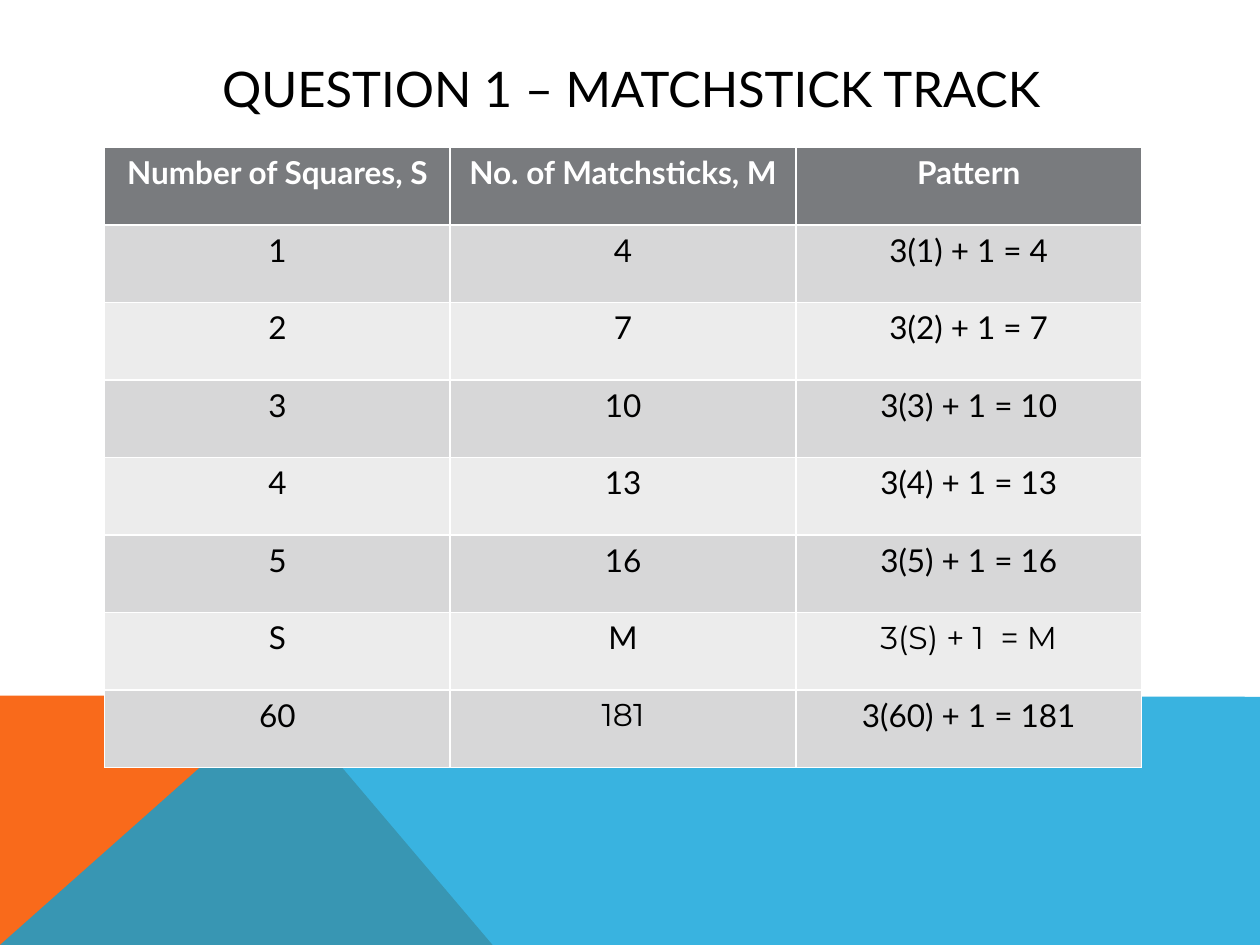
"""Build the matchstick track slide with its number pattern table."""
from lxml.etree import SubElement
from pptx import Presentation
from pptx.dml.color import RGBColor
from pptx.enum.text import MSO_ANCHOR, PP_ALIGN
from pptx.oxml.ns import qn
from pptx.util import Inches, Pt


def color(value):
    return RGBColor.from_string(value)


def style(paragraph, size, font_name, text_color, bold=False):
    paragraph.alignment = PP_ALIGN.CENTER
    paragraph.font.size = Pt(size)
    paragraph.font.name = font_name
    paragraph.font.bold = bold
    paragraph.font.color.rgb = color(text_color)


deck = Presentation()
deck.slide_width, deck.slide_height = Inches(10), Inches(7.5)
slide = deck.slides.add_slide(deck.slide_layouts[6])

bands = [
    ("F96A1B", 100, [(0, 7.5), (0, 5.52), (2.23, 5.52), (3.91, 7.5)]),
    ("08A1D9", 80, [(0, 7.5), (2.23, 5.52), (10, 5.53), (10, 7.5)]),
]
for fill, opacity, corners in bands:
    points = [(Inches(x), Inches(y)) for x, y in corners]
    outline = slide.shapes.build_freeform(*points[0])
    outline.add_line_segments(points[1:], close=True)
    band = outline.convert_to_shape()
    band.shadow.inherit = False
    band.line.fill.background()
    band.fill.solid()
    band.fill.fore_color.rgb = color(fill)
    if opacity < 100:
        fill_color = band.fill._xPr.find(".//" + qn("a:srgbClr"))
        SubElement(fill_color, qn("a:alpha"), val=str(opacity * 1000))

title = slide.shapes.add_textbox(Inches(0.9), Inches(0.4), Inches(8.22), Inches(0.6))
title.text_frame.word_wrap = True
title.text_frame.vertical_anchor = MSO_ANCHOR.MIDDLE
heading = title.text_frame.paragraphs[0]
heading.text = "QUESTION 1 – MATCHSTICK TRACK"
style(heading, 28, "Lato", "000000")

rows = [("Number of Squares, S", "No. of Matchsticks, M", "Pattern")]
for squares in (1, 2, 3, 4, 5):
    matches = 3 * squares + 1
    rows.append((str(squares), str(matches), f"3({squares}) + 1 = {matches}"))
rows += [("S", "M", "3(S) + 1  = M"), ("60", "181", "3(60) + 1 = 181")]
montserrat_texts = ("3(S) + 1  = M", "181")

pattern = slide.shapes.add_table(
    len(rows), 3, Inches(0.83), Inches(1.17), Inches(8.23), Inches(4.92)
).table
for r, row in enumerate(rows):
    header = r == 0
    row_fill = "797B7E" if header else ("ECECEC", "D7D7D8")[r % 2]
    for c, text in enumerate(row):
        cell = pattern.cell(r, c)
        cell.fill.solid()
        cell.fill.fore_color.rgb = color(row_fill)
        entry = cell.text_frame.paragraphs[0]
        entry.text = text
        font_name = "Montserrat" if text in montserrat_texts else "Lato"
        style(entry, 18, font_name, "FFFFFF" if header else "000000", header)

deck.save("out.pptx")
